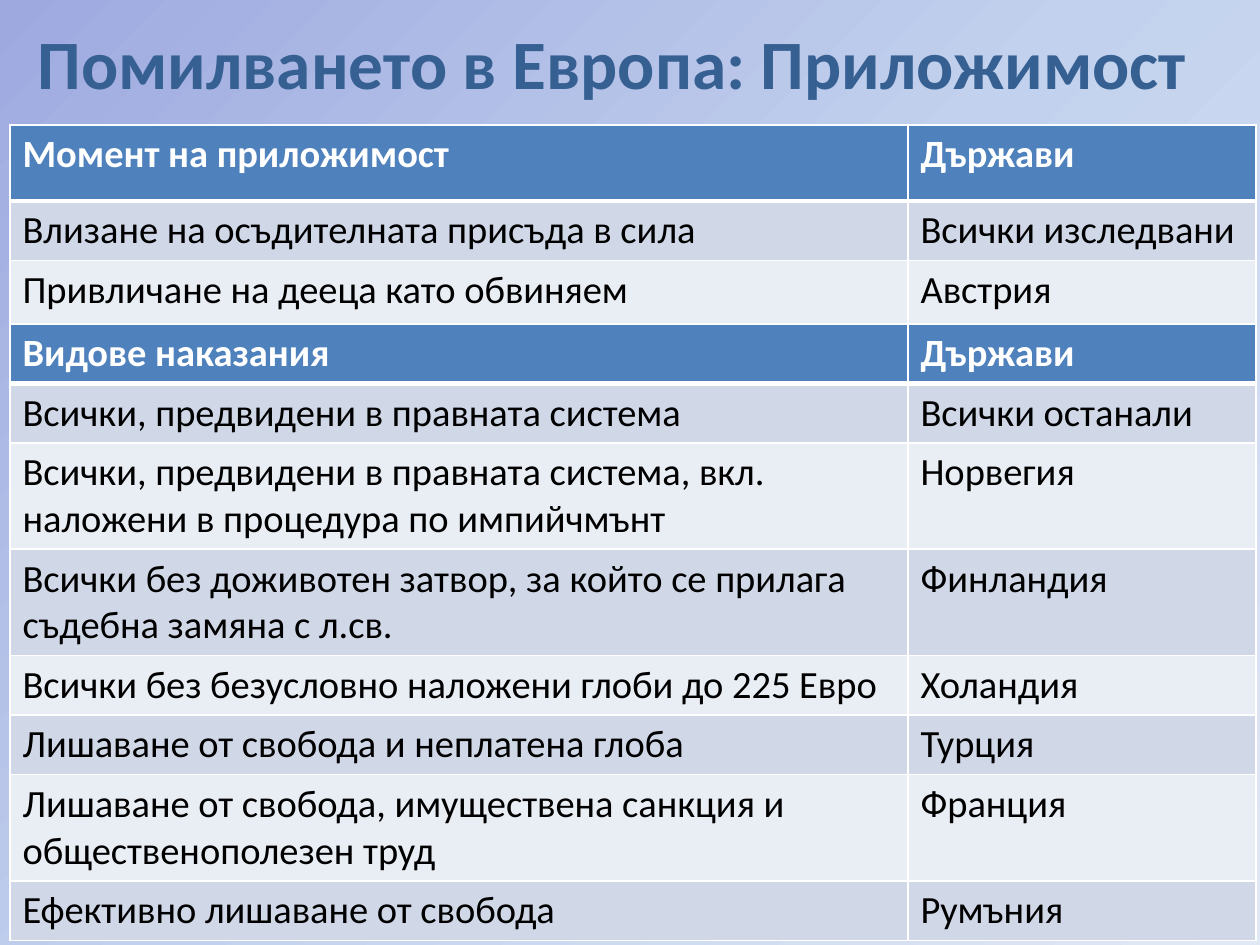
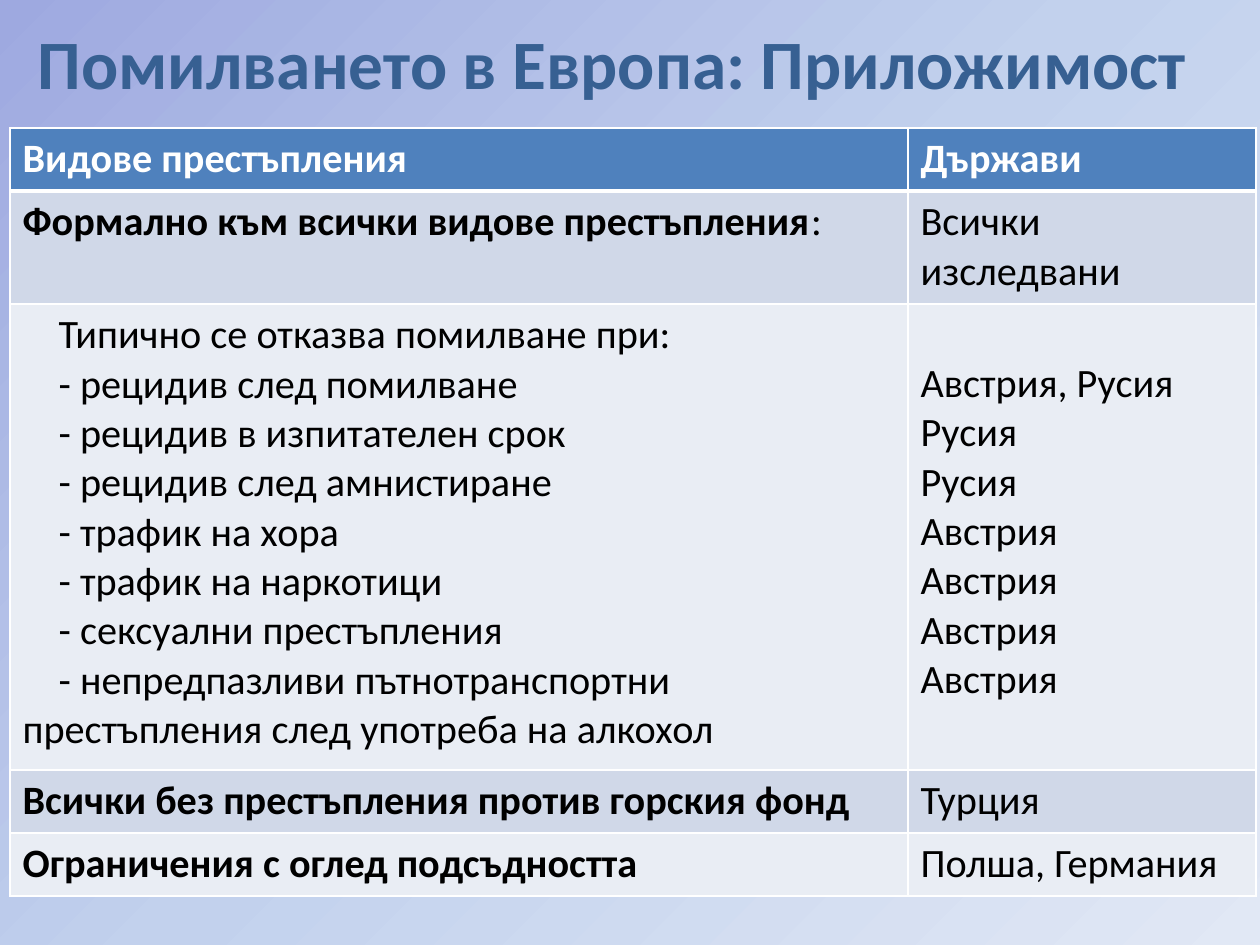
import copy

import pptx
import pptx.dml.color
import pptx.enum.text
import pptx.oxml
import pptx.oxml.ns
import pptx.util

SCALE = 914400 / 126
FONT = "Calibri"
TITLE, HEAD, DARK, LIGHT = "376092", "4F81BD", "D0D8E8", "E9EDF4"
WHITE, BLACK = "FFFFFF", "000000"
BACKGROUND = [(0, "9EA9E0"), (0.5, "C2D1ED"), (1, "E1E8F5")]
TABLE_LEFT = 10
COLS = [898, 348]
LINE_2 = 49
INDENT = 36


def px(n):
    return pptx.util.Emu(round(n * SCALE))


def add_run(p, text, size, color, bold):
    r = p.add_run()
    r.text = text
    r.font.name = FONT
    r.font.size = pptx.util.Pt(size)
    r.font.bold = bold
    r.font.color.rgb = pptx.dml.color.RGBColor.from_string(color)


# Each row: height, bold text, plain text, country column.
MOMENTS = [
    (76, "Момент на приложимост", "", "Държави"),
    (58, "", "Влизане на осъдителната присъда в сила", "Всички изследвани"),
    (76, "", "Привличане на дееца като обвиняем", "Австрия"),
]
PENALTIES = [
    (59, "Видове наказания", "", "Държави"),
    (59, "", "Всички, предвидени в правната система", "Всички останали"),
    (106, "", "Всички, предвидени в правната система, вкл. наложени в процедура по импийчмънт", "Норвегия"),
    (106, "", "Всички без доживотен затвор, за който се прилага съдебна замяна с л.св.", "Финландия"),
    (59, "", "Всички без безусловно наложени глоби до 225 Евро", "Холандия"),
    (59, "", "Лишаване от свобода и неплатена глоба", "Турция"),
    (106, "", "Лишаване от свобода, имуществена санкция и общественополезен труд", "Франция"),
    (59, "", "Ефективно лишаване от свобода", "Румъния"),
]
REFUSALS = [
    "Типично се отказва помилване при:",
    "- рецидив след помилване",
    "- рецидив в изпитателен срок",
    "- рецидив след амнистиране",
    "- трафик на хора",
    "- трафик на наркотици",
    "- сексуални престъпления",
    "- непредпазливи пътнотранспортни престъпления след употреба на алкохол",
]
REFUSING = ["Австрия, Русия", "Русия", "Русия", "Австрия", "Австрия", "Австрия", "Австрия"]
CRIMES = [
    (63, "Видове престъпления", "", "Държави"),
    (113, "Формално към всички видове престъпления", ":", "Всички изследвани"),
    (466, "", "\n".join(REFUSALS), "\n".join(REFUSING)),
    (63, "Всички без престъпления против горския фонд", "", "Турция"),
    (63, "Ограничения с оглед подсъдността", "", "Полша, Германия"),
]
SLIDES = [
    [(125, 22, MOMENTS), (324, 22, PENALTIES)],
    [(128, 23, CRIMES)],
]

prs = pptx.Presentation()
prs.slide_width, prs.slide_height = px(1260), px(945)

fill = prs.slide_master.background.fill
fill.gradient()
fill.gradient_angle = 315
stops = prs.slide_master.element.find(".//" + pptx.oxml.ns.qn("a:gsLst"))
stops.append(copy.deepcopy(stops[0]))
for stop, (position, color) in zip(fill.gradient_stops, BACKGROUND):
    stop.position = position
    stop.color.rgb = pptx.dml.color.RGBColor.from_string(color)

layout = prs.slide_layouts[5]
sp = layout.placeholders[0]
sp.left, sp.top, sp.width, sp.height = px(25), px(26), px(1191), px(87)

for tables in SLIDES:
    slide = prs.slides.add_slide(layout)
    tf = slide.shapes.title.text_frame
    tf.auto_size = pptx.enum.text.MSO_AUTO_SIZE.NONE
    tf.vertical_anchor = pptx.enum.text.MSO_ANCHOR.MIDDLE
    p = tf.paragraphs[0]
    p.alignment = pptx.enum.text.PP_ALIGN.LEFT
    p.line_spacing = 0.8
    add_run(p, "Помилването в Европа: Приложимост", 39.6, TITLE, True)

    for top, size, rows in tables:
        height = sum(row[0] for row in rows)
        table = slide.shapes.add_table(
            len(rows), 2, px(TABLE_LEFT), px(top), px(sum(COLS)), px(height)
        ).table
        table.first_row = table.horz_banding = False
        for column, width in zip(table.columns, COLS):
            column.width = px(width)

        for i, (height, strong, plain, countries) in enumerate(rows):
            table.rows[i].height = px(height)
            head = i == 0
            left = [[(strong, True), (line, False)] for line in plain.split("\n")]
            right = [[(line, head)] for line in countries.split("\n")]
            for j, paragraphs in enumerate([left, right]):
                cell = table.cell(i, j)
                tcPr = cell._tc.get_or_add_tcPr()
                for side in "LRTB":
                    thick = (head and side == "B") or (i == 1 and side == "T")
                    tcPr.append(pptx.oxml.parse_xml(
                        f'<a:ln{side} {pptx.oxml.ns.nsdecls("a")} w="{pptx.util.Pt(3 if thick else 1)}">'
                        f'<a:solidFill><a:srgbClr val="{WHITE}"/></a:solidFill></a:ln{side}>'
                    ))
                cell.fill.solid()
                color = HEAD if head else DARK if i % 2 else LIGHT
                cell.fill.fore_color.rgb = pptx.dml.color.RGBColor.from_string(color)
                listed = len(paragraphs) > 1
                if listed and j == 1:
                    cell.margin_top = px(6 + LINE_2)
                tf = cell.text_frame
                for k, runs in enumerate(paragraphs):
                    p = tf.add_paragraph() if k else tf.paragraphs[0]
                    if listed and j == 0:
                        p._p.get_or_add_pPr().set("indent", str(px(INDENT)))
                    for text, bold in runs:
                        if text:
                            add_run(p, text, size, WHITE if head else BLACK, bold)

prs.save("out.pptx")
